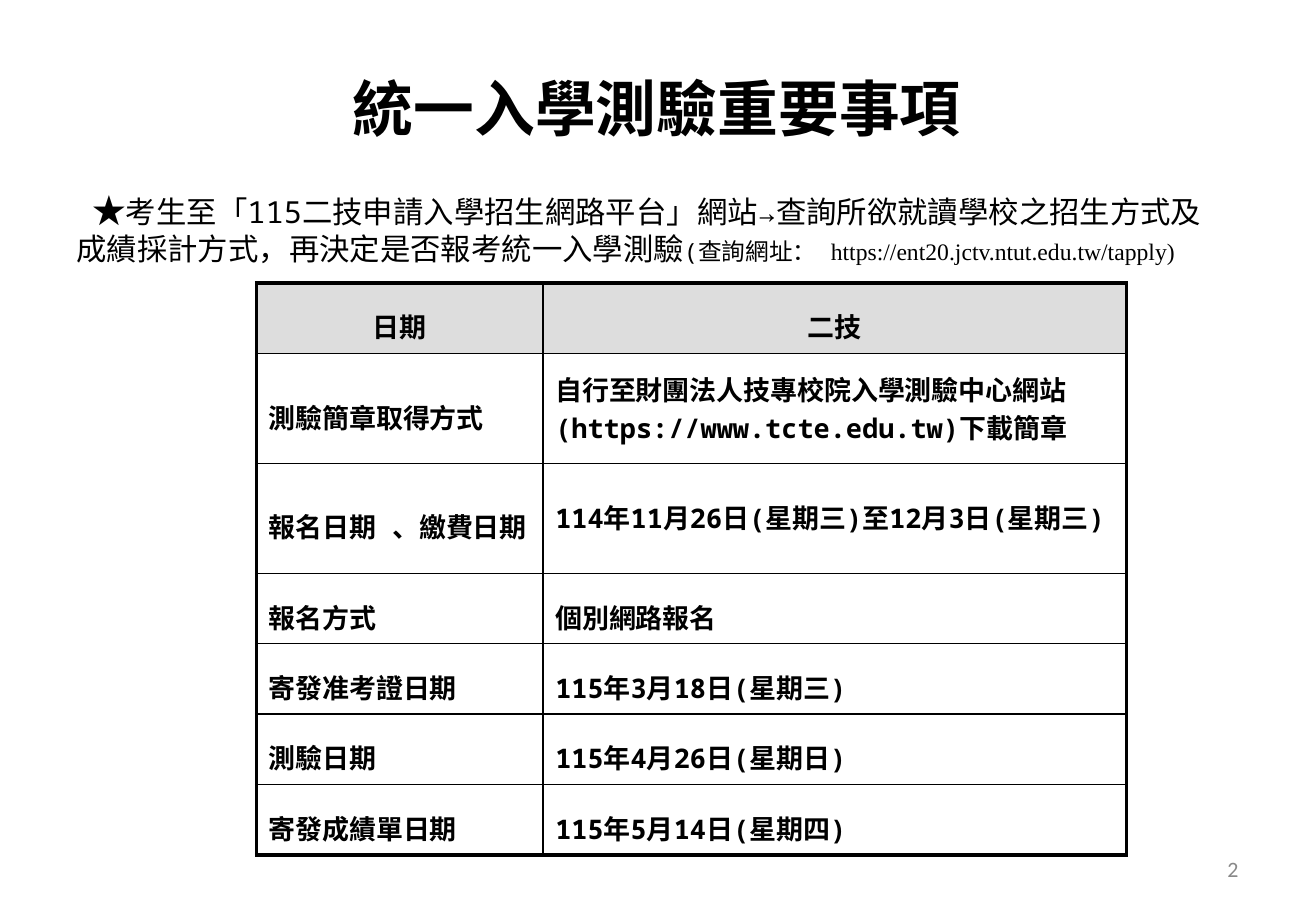
from dataclasses import dataclass

from lxml.etree import SubElement
from pptx import Presentation
from pptx.dml.color import RGBColor
from pptx.enum.text import MSO_ANCHOR as Anchor, MSO_AUTO_SIZE as AutoSize, PP_ALIGN as Align
from pptx.oxml.ns import qn
from pptx.util import Inches, Pt


@dataclass(frozen=True)
class Theme:
    """Colours, fonts and point sizes of the slide."""
    ink: str = "000000"
    paper: str = "FFFFFF"
    header: str = "DDDDDD"
    muted: str = "898989"
    sans: str = "Calibri"
    mono: str = "Noto Sans Mono"
    serif: str = "Times New Roman"
    title: float = 36
    star: float = 20
    intro: float = 18
    cell: float = 16
    address: float = 14
    number: float = 13
    frame: float = 2.25
    rule: float = 1


THEME = Theme()
HEADINGS = ("日期", "二技")
SCHEDULE = (
    ("測驗簡章取得方式", "自行至財團法人技專校院入學測驗中心網站(https://www.tcte.edu.tw)下載簡章"),
    ("報名日期 、繳費日期", "114年11月26日(星期三)至12月3日(星期三)"),
    ("報名方式", "個別網路報名"),
    ("寄發准考證日期", "115年3月18日(星期三)"),
    ("測驗日期", "115年4月26日(星期日)"),
    ("寄發成績單日期", "115年5月14日(星期四)"),
)
COLUMN_WIDTHS = (2.36, 4.8)
ROW_HEIGHT, TALL_ROW_HEIGHT = 0.58, 0.905
TALL_ROWS = (1, 2)
WRAPPED_SPACING = {(1, 1): 1.05, (2, 1): 1.0}


def add_text(para, text, *, size, font=THEME.mono, color=THEME.ink, bold=False):
    """Append a formatted span to a paragraph."""
    span = para.add_run()
    span.text = text
    span.font.size = Pt(size)
    span.font.bold = bold
    span.font.color.rgb = RGBColor.from_string(color)
    span.font.name = font
    SubElement(span.font._element, qn("a:ea"), typeface=font)


def prepare_frame(frame):
    """Make a text frame wrap, keep its size and centre vertically."""
    frame.word_wrap = True
    frame.auto_size = AutoSize.NONE
    frame.vertical_anchor = Anchor.MIDDLE
    return frame.paragraphs[0]


def add_box(page, left, top, width, height):
    """Add a text box and return its first paragraph."""
    box = page.shapes.add_textbox(Inches(left), Inches(top), Inches(width), Inches(height))
    return prepare_frame(box.text_frame)


def add_title(page):
    """Place and fill the title placeholder."""
    title = page.shapes.title
    title.left, title.top = Inches(0.83), Inches(0.55)
    title.width, title.height = Inches(9.15), Inches(0.66)
    para = prepare_frame(title.text_frame)
    para.alignment = Align.CENTER
    add_text(para, "統一入學測驗重要事項", size=THEME.title, font=THEME.sans, bold=True)


def add_intro(page):
    """Add the starred advice above the table."""
    para = add_box(page, 0.53, 1.55, 9.69, 0.66)
    para._p.get_or_add_pPr().set("indent", str(Inches(0.13)))
    add_text(para, "★", size=THEME.star, font=THEME.sans, bold=True)
    add_text(para, "考生至「115二技申請入學招生網路平台」網站→查詢所欲就讀學校之招生方式"
                   "及成績採計方式，再決定是否報考統一入學測驗", size=THEME.intro)
    add_text(para, "(查詢網址： ", size=THEME.address)
    add_text(para, "https://ent20.jctv.ntut.edu.tw/tapply)", size=THEME.address, font=THEME.serif)


def set_borders(cell, outer):
    """Draw the four cell borders, heavier on the outer sides."""
    properties = cell._tc.get_or_add_tcPr()
    for side in "LRTB":
        width = THEME.frame if side in outer else THEME.rule
        line = SubElement(properties, qn(f"a:ln{side}"), w=str(Pt(width)))
        fill = SubElement(line, qn("a:solidFill"))
        SubElement(fill, qn("a:srgbClr"), val=THEME.ink)


def fill_cell(cell, text, *, heading, spacing, outer):
    """Write and format one table cell."""
    set_borders(cell, outer)
    if heading:
        cell.fill.solid()
        cell.fill.fore_color.rgb = RGBColor.from_string(THEME.header)
    else:
        cell.fill.background()
    cell.vertical_anchor = Anchor.MIDDLE
    para = cell.text_frame.paragraphs[0]
    para.alignment = Align.CENTER if heading else Align.LEFT
    para.line_spacing = spacing
    add_text(para, text, size=THEME.cell, bold=True)


def add_schedule(page):
    """Add the table of examination dates."""
    rows = (HEADINGS, *SCHEDULE)
    heights = [TALL_ROW_HEIGHT if index in TALL_ROWS else ROW_HEIGHT for index in range(len(rows))]
    table = page.shapes.add_table(len(rows), len(HEADINGS), Inches(2.11), Inches(2.33),
                                  Inches(sum(COLUMN_WIDTHS)), Inches(sum(heights))).table
    table.first_row = table.horz_banding = False
    for column, width in zip(table.columns, COLUMN_WIDTHS):
        column.width = Inches(width)
    for i, (texts, height) in enumerate(zip(rows, heights)):
        table.rows[i].height = Inches(height)
        for j, text in enumerate(texts):
            outer = "LR"[j] + ("T" if i == 0 else "") + ("B" if i == len(rows) - 1 else "")
            fill_cell(table.cell(i, j), text, heading=i == 0,
                      spacing=WRAPPED_SPACING.get((i, j), 1.5), outer=outer)


def add_page_number(page):
    """Add the page number at the lower right."""
    para = add_box(page, 7.76, 6.95, 2.53, 0.4)
    para.alignment = Align.RIGHT
    add_text(para, "2", size=THEME.number, font=THEME.sans, color=THEME.muted)


def main():
    """Build and save the slide."""
    deck = Presentation()
    deck.slide_width, deck.slide_height = Inches(10.83), Inches(7.5)
    page = deck.slides.add_slide(deck.slide_layouts.get_by_name("Title Only"))
    page.background.fill.solid()
    page.background.fill.fore_color.rgb = RGBColor.from_string(THEME.paper)
    add_title(page)
    add_intro(page)
    add_schedule(page)
    add_page_number(page)
    deck.save("out.pptx")


if __name__ == "__main__":
    main()
